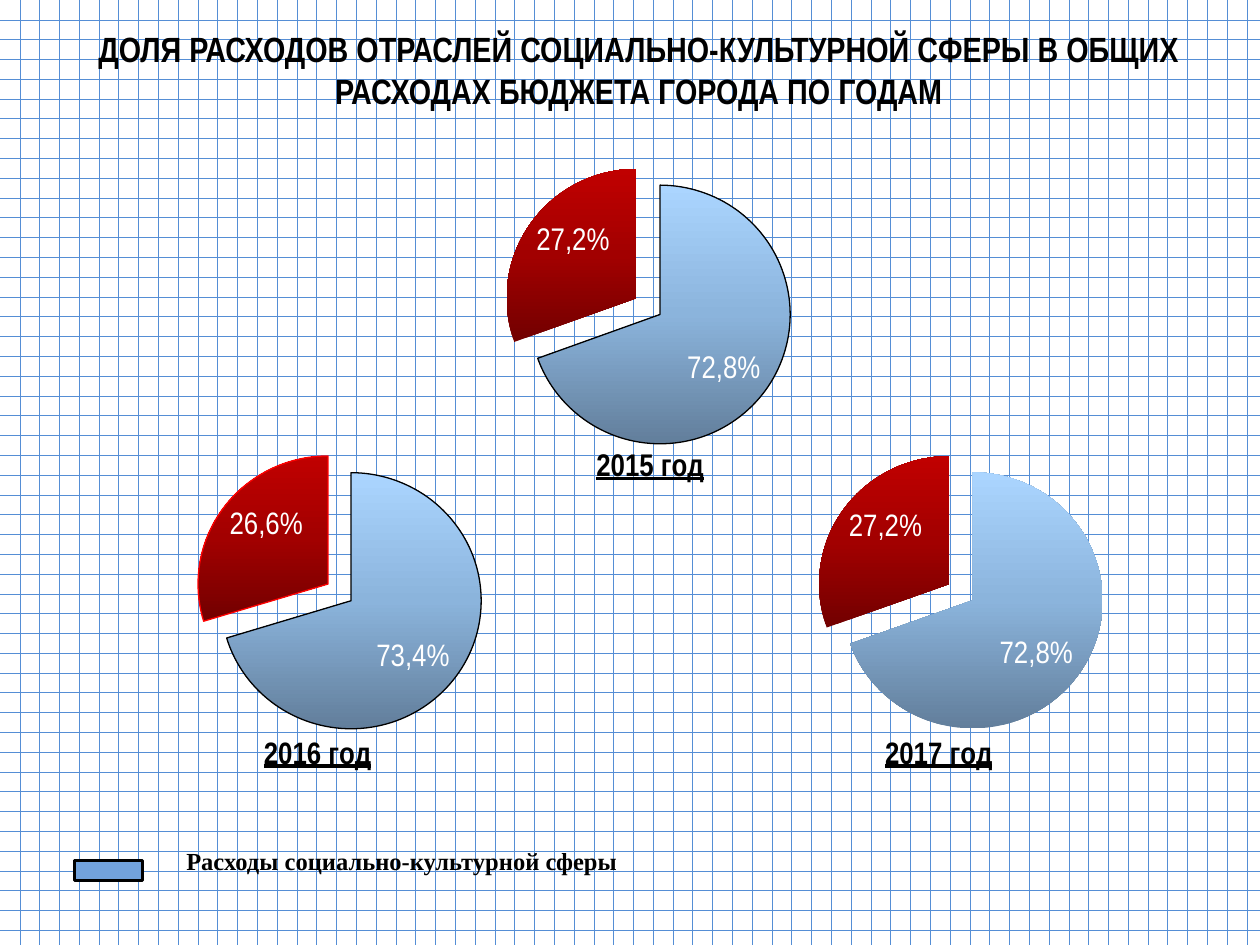
from pptx import Presentation
from pptx.chart.data import CategoryChartData
from pptx.dml.color import RGBColor
from pptx.enum import chart as c, dml, shapes, text
from pptx.oxml import parse_xml
from pptx.oxml.ns import nsdecls, qn
from pptx.util import Inches, Pt

BLACK = RGBColor(0x00, 0x00, 0x00)
WHITE = RGBColor(0xFF, 0xFF, 0xFF)
RED = RGBColor(0xFF, 0x00, 0x00)
GRID_BLUE = RGBColor(0x55, 0x8E, 0xD5)
LEGEND_BLUE = RGBColor(0x72, 0xA2, 0xDC)
BLUE_STOPS = [(0, RGBColor(0x62, 0x7E, 0x9B)), (50, RGBColor(0x8B, 0xB4, 0xDC)),
              (100, RGBColor(0xAB, 0xD5, 0xFF))]
RED_STOPS = [(0, RGBColor(0x72, 0x00, 0x00)), (50, RGBColor(0xA2, 0x00, 0x00)),
             (100, RGBColor(0xC0, 0x00, 0x00))]
NARROW = "Arial Narrow"

# year, left, top, values, labels, slice outlines, title corner within the chart
PIES = [
    ("2015 год", 2.8, 1.31, (69.5, 30.5), ("72,8%", "27,2%"), (BLACK, None), (0.4, 0.86)),
    ("2017 год", 5.28, 3.59, (69.5, 30.5), ("72,8%", "27,2%"), (None, None), (0.36, 0.87)),
    ("2016 год", 0.35, 3.59, (70.3, 29.7), ("73,4%", "26,6%"), (BLACK, RED), (0.36, 0.87)),
]


def set_font(font, name, size, color, bold):
    font.name = name
    font.size = Pt(size)
    font.color.rgb = color
    font.bold = bold


def set_background(slide):
    fill = slide.background.fill
    fill.patterned()
    fill.pattern = dml.MSO_PATTERN.DOTTED_GRID
    fill.fore_color.rgb = GRID_BLUE
    fill.back_color.rgb = WHITE


def set_title(slide, title_text):
    title = slide.shapes.title
    title.left, title.top = Inches(0.19), Inches(0.18)
    title.width, title.height = Inches(9.76), Inches(0.75)
    frame = title.text_frame
    frame.word_wrap = True
    frame.auto_size = text.MSO_AUTO_SIZE.NONE
    frame.vertical_anchor = text.MSO_ANCHOR.MIDDLE
    frame.text = title_text
    paragraph = frame.paragraphs[0]
    paragraph.alignment = text.PP_ALIGN.CENTER
    set_font(paragraph.font, NARROW, 20, BLACK, True)


def manual_layout(inner=False, **fractions):
    """Return a c:layout element; keys are x, y, w and h as parts of the chart."""
    target = '<c:layoutTarget val="inner"/>' if inner else ""
    modes = '<c:xMode val="edge"/><c:yMode val="edge"/>'
    values = "".join(f'<c:{key} val="{value}"/>' for key, value in fractions.items())
    return parse_xml(f'<c:layout {nsdecls("c")}><c:manualLayout>'
                     f'{target}{modes}{values}</c:manualLayout></c:layout>')


def place_part(part, layout, index):
    for old_layout in part.findall(qn("c:layout")):
        part.remove(old_layout)
    part.insert(index, layout)


def fill_gradient(shape_format, stops):
    """Fill with several stops, the first at the bottom."""
    shape_format.fill.gradient()
    shape_format.fill.gradient_angle = 90
    stop_list = shape_format.fill._xPr.find(qn("a:gradFill")).find(qn("a:gsLst"))
    for old_stop in list(stop_list):
        stop_list.remove(old_stop)
    for position, color in stops:
        stop_list.append(parse_xml(f'<a:gs {nsdecls("a")} pos="{position * 1000}">'
                                   f'<a:srgbClr val="{color}"/></a:gs>'))


def set_explosion(element, percent):
    explosion = parse_xml(f'<c:explosion {nsdecls("c")} val="{percent}"/>')
    element.find(qn("c:spPr")).addnext(explosion)


def format_slice(point, stops, outline, label):
    fill_gradient(point.format, stops)
    if outline is None:
        point.format.line.fill.background()
    else:
        point.format.line.color.rgb = outline
        point.format.line.width = Pt(0.75)
    frame = point.data_label.text_frame
    frame.text = label
    set_font(frame.paragraphs[0].runs[0].font, NARROW, 18, WHITE, False)
    point.data_label.position = c.XL_LABEL_POSITION.INSIDE_END


def add_pie(slide, year, left, top, values, labels, outlines, title_corner):
    data = CategoryChartData()
    data.categories = ["1", "2"]
    data.add_series("Series 1", values)
    chart = slide.shapes.add_chart(c.XL_CHART_TYPE.PIE, Inches(left), Inches(top),
                                   Inches(4.72), Inches(2.6), data).chart
    set_font(chart.font, "Calibri", 10, BLACK, False)
    chart.has_legend = False

    chart.has_title = True
    title_frame = chart.chart_title.text_frame
    title_frame.text = year
    title_font = title_frame.paragraphs[0].runs[0].font
    set_font(title_font, NARROW, 18, BLACK, True)
    title_font.underline = True
    x, y = title_corner
    place_part(chart.chart_title._element, manual_layout(x=x, y=y), 1)
    plot_area = chart._chartSpace.chart.plotArea
    place_part(plot_area, manual_layout(inner=True, x=0.065, y=0, w=0.85, h=0.85), 0)

    plot = chart.plots[0]
    plot.vary_by_categories = True
    series = plot.series[0]
    series.format.line.fill.background()
    set_explosion(series._element, 7)
    series_labels = series.data_labels
    series_labels.show_value = True
    series_labels.position = c.XL_LABEL_POSITION.INSIDE_END
    set_font(series_labels.font, NARROW, 18, WHITE, True)
    for index, stops in enumerate((BLUE_STOPS, RED_STOPS)):
        format_slice(series.points[index], stops, outlines[index], labels[index])
    set_explosion(series._element.find(qn("c:dPt")), 15)
    for point_element in series._element.findall(qn("c:dPt"))[1:]:
        set_explosion(point_element, 7)
    for point_element in series._element.findall(qn("c:dPt")):
        explosion = point_element.find(qn("c:explosion"))
        point_element.find(qn("c:spPr")).addprevious(explosion)


def add_legend(slide, label):
    key = slide.shapes.add_shape(shapes.MSO_SHAPE.RECTANGLE, Inches(0.59), Inches(6.83),
                                 Inches(0.54), Inches(0.16))
    key.shadow.inherit = False
    key.fill.solid()
    key.fill.fore_color.rgb = LEGEND_BLUE
    key.line.color.rgb = BLACK
    key.line.width = Pt(2)

    frame = slide.shapes.add_textbox(Inches(1.38), Inches(6.78),
                                     Inches(3.85), Inches(0.26)).text_frame
    frame.word_wrap = True
    frame.margin_top = frame.margin_bottom = 0
    frame.text = label
    paragraph = frame.paragraphs[0]
    paragraph.line_spacing = 0.7
    set_font(paragraph.font, "Times New Roman", 14, BLACK, True)


def main():
    presentation = Presentation()
    presentation.slide_width, presentation.slide_height = Inches(10), Inches(7.5)
    slide = presentation.slides.add_slide(presentation.slide_layouts[5])
    set_background(slide)
    set_title(slide, "ДОЛЯ РАСХОДОВ ОТРАСЛЕЙ СОЦИАЛЬНО-КУЛЬТУРНОЙ СФЕРЫ "
                     "В ОБЩИХ РАСХОДАХ БЮДЖЕТА ГОРОДА ПО ГОДАМ")
    for pie in PIES:
        add_pie(slide, *pie)
    add_legend(slide, "Расходы социально-культурной сферы")
    presentation.save("out.pptx")


if __name__ == "__main__":
    main()
